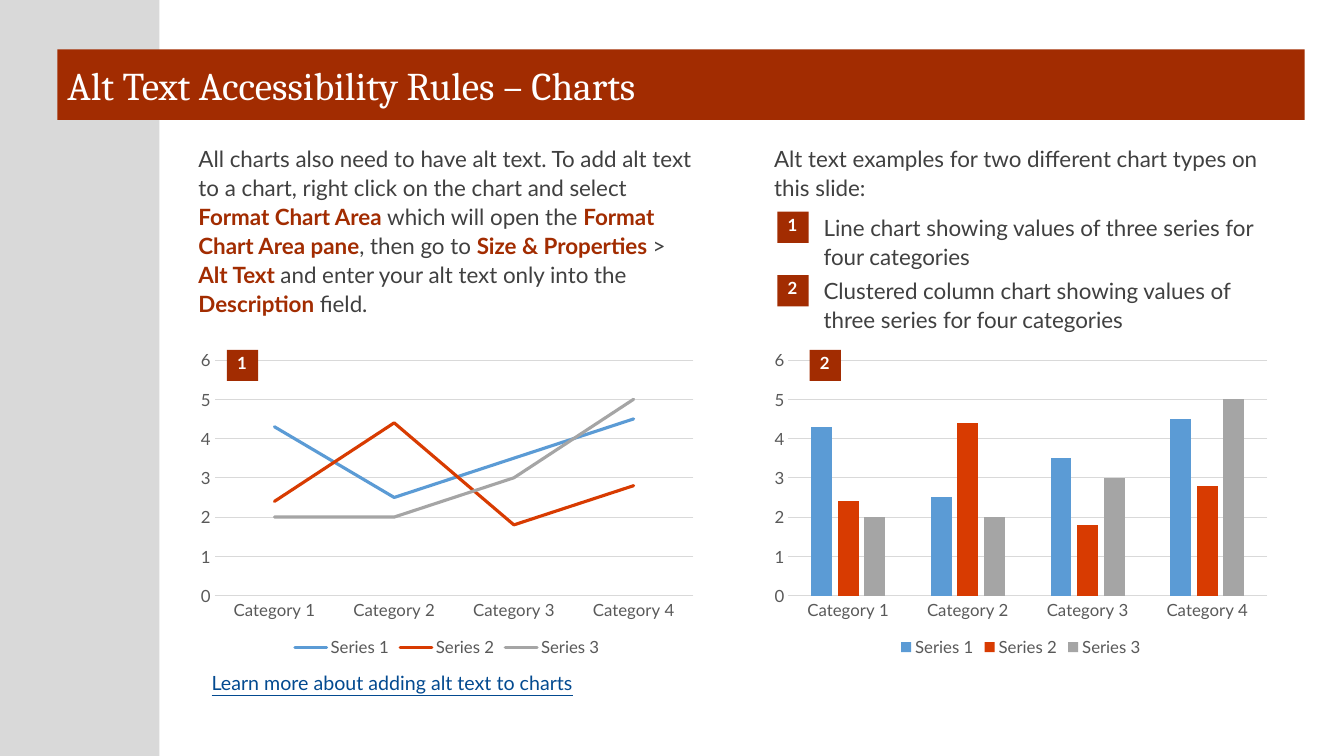
from lxml import etree
from pptx import Presentation
from pptx import util as u
from pptx.chart.data import CategoryChartData
from pptx.dml.color import RGBColor
from pptx.enum import chart as charts, shapes, text
from pptx.oxml import ns

RUST, INK, WHITE = "A22C01", "404040", "FFFFFF"
PALE, AXIS_INK, LINK = "D9D9D9", "595959", "034A90"
SERIES_COLORS = ["5B9BD5", "D83B01", "A5A5A5"]
SERIES = {
    "Series 1": (4.3, 2.5, 3.5, 4.5),
    "Series 2": (2.4, 4.4, 1.8, 2.8),
    "Series 3": (2, 2, 3, 5),
}
INSTRUCTIONS = [
    ("All charts also need to have alt text. To add alt text to a chart, "
     "right click on the chart and select ", False),
    ("Format Chart Area ", True),
    ("which will open the ", False),
    ("Format Chart Area pane", True),
    (", then go to ", False),
    ("Size & Properties ", True),
    ("> ", False),
    ("Alt Text ", True),
    ("and enter your alt text only into the ", False),
    ("Description", True),
    (" field.", False),
]
EXAMPLES = [
    ("1", "Line chart showing values of three series for four categories"),
    ("2", "Clustered column chart showing values of three series for four categories"),
]


def rgb(value):
    return RGBColor.from_string(value)


class Deck:
    body_font = "Lato"
    title_font = "Cambria"

    def __init__(self):
        self.presentation = Presentation()
        self.presentation.slide_width = u.Inches(13.33)
        self.presentation.slide_height = u.Inches(7.5)
        self.slide = self.presentation.slides.add_slide(self.presentation.slide_layouts[6])

    def style(self, font, size, color, bold=None, name=None):
        font.name = name or self.body_font
        font.size = u.Pt(size)
        font.color.rgb = rgb(color)
        font.bold = bold

    def block(self, box, color, parent=None):
        panel = (parent or self.slide).shapes.add_shape(
            shapes.MSO_SHAPE.RECTANGLE, *map(u.Inches, box))
        panel.shadow.inherit = False
        panel.fill.solid()
        panel.fill.fore_color.rgb = rgb(color)
        panel.line.fill.background()
        return panel

    def title(self, box, wording):
        banner = self.block(box, RUST)
        frame = banner.text_frame
        frame.text = wording
        frame.vertical_anchor = text.MSO_ANCHOR.MIDDLE
        frame.paragraphs[0].alignment = text.PP_ALIGN.LEFT
        self.style(frame.paragraphs[0].runs[0].font, 28, WHITE, name=self.title_font)

    def text(self, box, parts, size=16, color=INK, spacing=1.08, parent=None):
        frame = (parent or self.slide).shapes.add_textbox(*map(u.Inches, box)).text_frame
        frame.word_wrap = True
        paragraph = frame.paragraphs[0]
        paragraph.line_spacing = spacing
        for wording, strong in parts:
            run = paragraph.add_run()
            run.text = wording
            self.style(run.font, size, RUST if strong else color, strong)
        return paragraph

    def badge(self, left, top, number):
        group = self.slide.shapes.add_group_shape()
        self.block((left, top, 0.31, 0.31), RUST, group)
        label = self.text((left - 0.06, top - 0.02, 0.42, 0.3), [(number, False)],
                          12, WHITE, None, group)
        label.alignment = text.PP_ALIGN.CENTER
        label.runs[0].font.bold = True

    def link(self, box, wording):
        label = self.text(box, [(wording, False)], 14, LINK, None)
        label.runs[0].font.underline = True

    def chart(self, left, kind):
        data = CategoryChartData()
        data.categories = [f"Category {n}" for n in range(1, 5)]
        for name, values in SERIES.items():
            data.add_series(name, values)
        box = map(u.Inches, (left, 3.41, 5.09, 3.15))
        chart = self.slide.shapes.add_chart(kind, *box, data).chart
        chart.has_title = False
        self.style(chart.font, 10, "000000")
        chart.has_legend = True
        chart.legend.position = charts.XL_LEGEND_POSITION.BOTTOM
        chart.legend.include_in_layout = False
        self.style(chart.legend.font, 12, AXIS_INK)

        for axis in (chart.category_axis, chart.value_axis):
            self.style(axis.tick_labels.font, 12, AXIS_INK)
            axis.major_tick_mark = charts.XL_TICK_MARK.NONE
            axis.minor_tick_mark = charts.XL_TICK_MARK.NONE
        scale = chart.value_axis
        scale.minimum_scale, scale.maximum_scale, scale.major_unit = 0, 6, 1
        scale.format.line.fill.background()
        scale.has_major_gridlines = True
        for line in (scale.major_gridlines.format.line, chart.category_axis.format.line):
            line.color.rgb = rgb(PALE)
            line.width = u.Pt(0.75)

        plot = chart.plots[0]
        plot.vary_by_categories = False
        is_line = kind == charts.XL_CHART_TYPE.LINE
        if not is_line:
            plot.gap_width, plot.overlap = 219, -27
        for series, color in zip(plot.series, SERIES_COLORS):
            if is_line:
                series.smooth = False
                series.marker.style = charts.XL_MARKER_STYLE.NONE
                series.format.line.color.rgb = rgb(color)
                series.format.line.width = u.Pt(2.25)
                outline = series.format.line.fill._xPr
                outline.set("cap", "rnd")
                etree.SubElement(outline, ns.qn("a:round"))
            else:
                series.invert_if_negative = False
                series.format.fill.solid()
                series.format.fill.fore_color.rgb = rgb(color)


def main():
    deck = Deck()
    deck.block((0, 0, 1.58, 7.5), PALE)
    deck.title((0.57, 0.49, 12.37, 0.7), "Alt Text Accessibility Rules – Charts")
    deck.text((1.87, 1.37, 5.12, 2.09), INSTRUCTIONS)
    deck.text((7.58, 1.37, 5.21, 0.67),
              [("Alt text examples for two different chart types on this slide:", False)])
    for row, (number, description) in enumerate(EXAMPLES):
        top = 2.1 + 0.63 * row
        deck.badge(7.71, top, number)
        deck.text((8.07, top - 0.05, 4.67, 0.68), [(description, False)])
    deck.chart(1.89, charts.XL_CHART_TYPE.LINE)
    deck.chart(7.58, charts.XL_CHART_TYPE.COLUMN_CLUSTERED)
    deck.badge(2.25, 3.47, "1")
    deck.badge(8.03, 3.47, "2")
    deck.link((2, 6.61, 3.96, 0.34), "Learn more about adding alt text to charts")
    deck.presentation.save("out.pptx")


if __name__ == "__main__":
    main()
